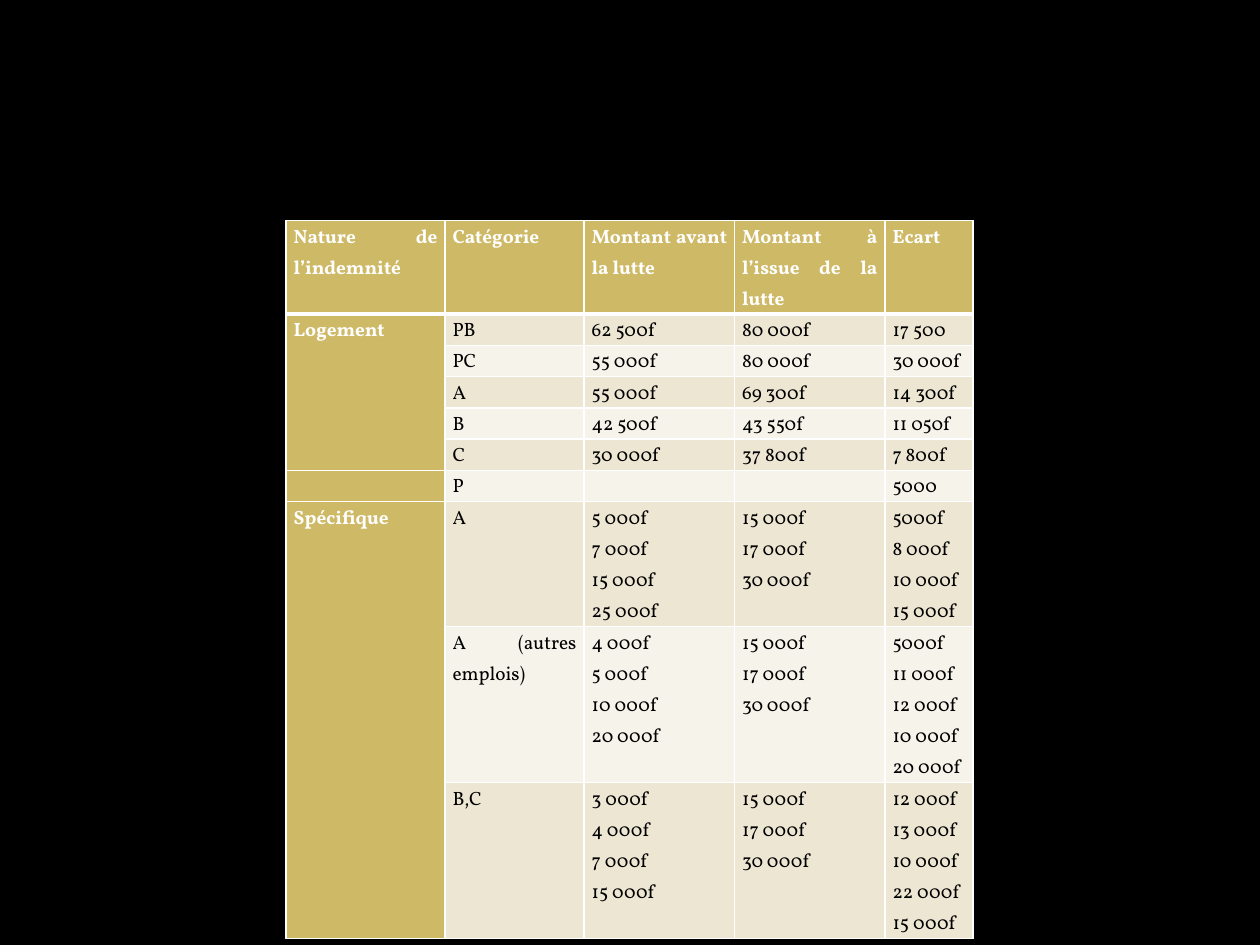
from pptx import Presentation
from pptx.dml.color import RGBColor as RGB
from pptx.enum.text import PP_ALIGN as ALIGN
from pptx.oxml import parse_xml
from pptx.oxml.ns import nsdecls
from pptx.util import Pt

COLORS = {
    "background": "000000", "text": "000000", "white": "FFFFFF",
    "gold": "CEB966", "dark_band": "EDE6D3", "light_band": "F6F3EA",
}
FONT, SIZE = "Vollkorn", 11


def write_text(cell, text, color="text", bold=False):
    """Fill the cell with one justified paragraph per line of text."""
    frame = cell.text_frame
    for i, line in enumerate(text.split("\n")):
        para = frame.add_paragraph() if i else frame.paragraphs[0]
        para.alignment = ALIGN.JUSTIFY
        para.line_spacing = 1.15
        if not line:
            # The end mark keeps an empty cell as low as a line of text
            para._p.get_or_add_endParaRPr().set("sz", str(SIZE * 100))
            continue
        run = para.add_run()
        run.text = line
        run.font.name = FONT
        run.font.size = Pt(SIZE)
        run.font.bold = bold
        run.font.color.rgb = RGB.from_string(COLORS[color])


def draw_borders(cell, top, bottom):
    for side, width in (("L", 1), ("R", 1), ("T", top), ("B", bottom)):
        cell._tc.get_or_add_tcPr().append(parse_xml(
            f'<a:ln{side} {nsdecls("a")} w="{Pt(width)}"><a:solidFill>'
            f'<a:srgbClr val="{COLORS["white"]}"/></a:solidFill></a:ln{side}>'))


prs = Presentation()
prs.slide_width, prs.slide_height = Pt(720), Pt(540)
slide = prs.slides.add_slide(prs.slide_layouts[6])
slide.background.fill.solid()
slide.background.fill.fore_color.rgb = RGB.from_string(COLORS["background"])

allowances = [
    ("Nature de l’indemnité", "Catégorie", "Montant avant la lutte",
     "Montant à l’issue de la lutte", "Ecart"),
    ("Logement", "PB", "62 500f", "80 000f", "17 500"),
    ("", "PC", "55 000f", "80 000f", "30 000f"),
    ("", "A", "55 000f", "69 300f", "14 300f"),
    ("", "B", "42 500f", "43 550f", "11 050f"),
    ("", "C", "30 000f", "37 800f", "7 800f"),
    ("", "P", "", "", "5000"),
    ("Spécifique", "A", "5 000f\n7 000f\n15 000f\n25 000f",
     "15 000f\n17 000f\n30 000f", "5000f\n8 000f\n10 000f\n15 000f"),
    ("", "A (autres emplois)", "4 000f\n5 000f\n10 000f\n20 000f",
     "15 000f\n17 000f\n30 000f", "5000f\n11 000f\n12 000f\n10 000f\n20 000f"),
    ("", "B,C", "3 000f\n4 000f\n7 000f\n15 000f",
     "15 000f\n17 000f\n30 000f", "12 000f\n13 000f\n10 000f\n22 000f\n15 000f"),
]
col_widths = [90.8, 79.5, 86, 86, 50.4]
row_heights = [46.8] + [15.6] * 6 + [62, 78, 78]

table = slide.shapes.add_table(
    len(allowances), len(col_widths), Pt(163.5), Pt(126),
    Pt(sum(col_widths)), Pt(sum(row_heights))).table
for column, width in zip(table.columns, col_widths):
    column.width = Pt(width)
for row, height in zip(table.rows, row_heights):
    row.height = Pt(height)
for first, last in ((1, 5), (7, 9)):
    table.cell(first, 0).merge(table.cell(last, 0))

for r, values in enumerate(allowances):
    for c, value in enumerate(values):
        cell = table.cell(r, c)
        heading = r == 0 or c == 0
        cell.margin_left = cell.margin_right = Pt(4.3)
        cell.margin_top = cell.margin_bottom = 0
        draw_borders(cell, top=3 if r == 1 else 1, bottom=3 if r == 0 else 1)
        band = "dark_band" if r % 2 else "light_band"
        cell.fill.solid()
        cell.fill.fore_color.rgb = RGB.from_string(COLORS["gold" if heading else band])
        write_text(cell, value, color="white" if heading else "text", bold=heading)

prs.save("out.pptx")
